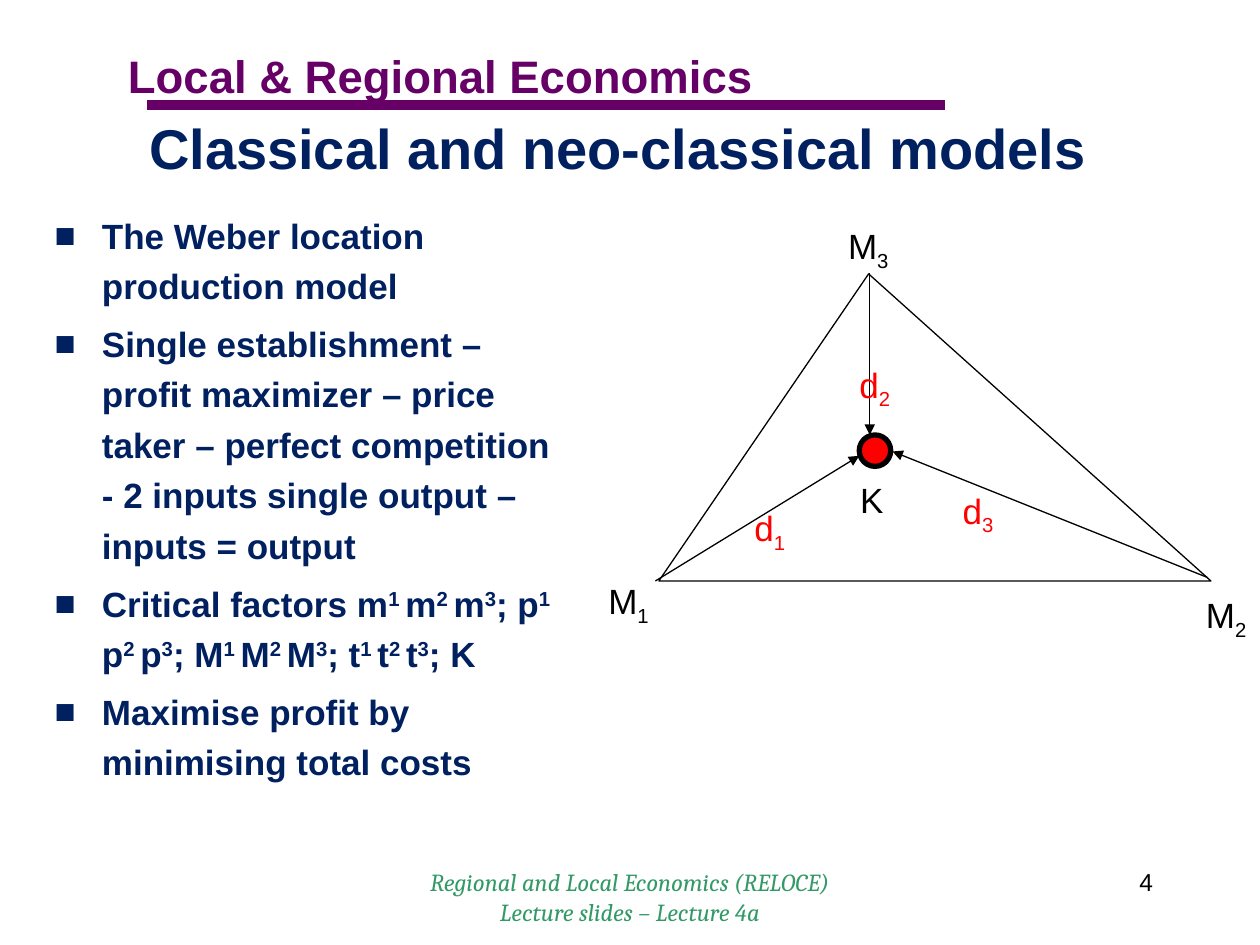
"""Build a slide on the Weber location model with its location triangle."""
from lxml.etree import SubElement
from pptx import Presentation
from pptx.dml.color import RGBColor
from pptx.enum.shapes import MSO_CONNECTOR, MSO_SHAPE
from pptx.enum.text import MSO_ANCHOR, MSO_AUTO_SIZE, PP_ALIGN
from pptx.oxml.ns import qn
from pptx.util import Pt

COLORS = {"purple": "660066", "navy": "002060", "green": "339966",
          "red": "FF0000", "black": "000000"}
BULLETS = [
    "The Weber location production model",
    "Single establishment – profit maximizer – price taker – perfect competition"
    " - 2 inputs single output – inputs = output",
    "Critical factors m|1 |m|2 |m|3|; p|1 |p|2 |p|3|; M|1 |M|2 |M|3|; t|1 |t|2 |t|3|; K",
    "Maximise profit by minimising total costs",
]
ARROWS = [(690, 330, 510, 258), (497, 156, 497, 248.5), (374.5, 332, 491, 260.5)]
LABELS = [
    ("K", 484.5, 270, 28, "black"),
    ("M|3", 477.5, 125, 38, "black"),
    ("M|1", 340.5, 327.5, 38, "black"),
    ("M|2", 682, 335.5, 38, "black"),
    ("d|1", 424, 286, 33, "red"),
    ("d|2", 484, 204, 33, "red"),
    ("d|3", 543, 276, 33, "red"),
]


def rgb(name):
    return RGBColor.from_string(COLORS[name])


def format_runs(p, size, color, font="Arial", bold=False, italic=False):
    for r in p.runs:
        r.font.name, r.font.size = font, Pt(size)
        r.font.bold, r.font.italic = bold, italic
        r.font.color.rgb = rgb(color)


def add_scripted(p, text, baseline):
    for i, part in enumerate(text.split("|")):
        r = p.add_run()
        r.text = part
        if i % 2:
            r._r.get_or_add_rPr().set("baseline", str(baseline * 1000))


def place(sp, left, top, width, height):
    sp.left, sp.top, sp.width, sp.height = Pt(left), Pt(top), Pt(width), Pt(height)


def add_text(s, text, box, size, color, align=PP_ALIGN.LEFT, **style):
    tf = s.shapes.add_textbox(*map(Pt, box)).text_frame
    tf.word_wrap = True
    tf.text = text
    for p in tf.paragraphs:
        p.alignment = align
        format_runs(p, size, color, **style)


def add_label(s, text, left, top, width, color):
    tf = s.shapes.add_textbox(Pt(left), Pt(top), Pt(width), Pt(31)).text_frame
    tf.word_wrap = False
    tf.auto_size = MSO_AUTO_SIZE.SHAPE_TO_FIT_TEXT
    add_scripted(tf.paragraphs[0], text, -25)
    format_runs(tf.paragraphs[0], 20, color)


def add_line(s, ends, color, width, arrow=False):
    line = s.shapes.add_connector(MSO_CONNECTOR.STRAIGHT, *map(Pt, ends))
    line.line.color.rgb = rgb(color)
    line.line.width = Pt(width)
    if arrow:
        SubElement(line.line._get_or_add_ln(), qn("a:tailEnd"), type="triangle")
    SubElement(line._element.spPr, qn("a:effectLst"))


def add_outlined(s, kind, box, width, fill=None):
    sp = s.shapes.add_shape(kind, *map(Pt, box))
    sp.shadow.inherit = False
    if fill:
        sp.fill.solid()
        sp.fill.fore_color.rgb = rgb(fill)
    else:
        sp.fill.background()
    sp.line.color.rgb = rgb("black")
    sp.line.width = Pt(width)
    return sp


def fill_title(sp, text):
    place(sp, 78, 72, 612, 35)
    tf = sp.text_frame
    tf.text = text
    tf.auto_size = MSO_AUTO_SIZE.NONE
    tf.vertical_anchor = MSO_ANCHOR.TOP
    p = tf.paragraphs[0]
    p.alignment = PP_ALIGN.LEFT
    p.line_spacing = 0.7
    format_runs(p, 32, "navy", bold=True)


def fill_bullets(sp, items):
    place(sp, 24, 114, 306, 366)
    tf = sp.text_frame
    tf.auto_size = MSO_AUTO_SIZE.NONE
    for i, item in enumerate(items):
        p = tf.add_paragraph() if i else tf.paragraphs[0]
        pPr = p._p.get_or_add_pPr()
        pPr.set("marL", str(Pt(27)))
        pPr.set("indent", str(-Pt(27)))
        SubElement(pPr, qn("a:buChar"), char="■")
        p.line_spacing = 1.2
        p.space_before = Pt(4.3 if i else 0)
        add_scripted(p, item, 30)
        format_runs(p, 20, "navy", bold=True)


def main():
    prs = Presentation()
    prs.slide_width, prs.slide_height = Pt(720), Pt(540)
    s = prs.slides.add_slide(prs.slide_layouts[1])
    add_text(s, "Local & Regional Economics", (66, 24, 480, 39), 26, "purple", bold=True)
    add_line(s, (84, 60, 540, 60), "purple", 6)
    fill_title(s.shapes.title, "Classical and neo-classical models")
    fill_bullets(s.placeholders[1], BULLETS)
    triangle = add_outlined(s, MSO_SHAPE.ISOSCELES_TRIANGLE, (376.5, 156.5, 315.5, 175.5), 0.75)
    triangle.adjustments[0] = 0.38
    for ends in ARROWS:
        add_line(s, ends, "black", 0.75, arrow=True)
    for label in LABELS:
        add_label(s, *label)
    add_outlined(s, MSO_SHAPE.OVAL, (491, 248.5, 18, 18), 3, "red")
    add_text(s, "Regional and Local Economics (RELOCE)\nLecture slides – Lecture 4a",
             (210, 492, 300, 36), 14, "green", PP_ALIGN.CENTER, font="Cambria", italic=True)
    add_text(s, "4", (516, 492, 150, 36), 14, "black", PP_ALIGN.RIGHT)
    prs.save("out.pptx")


if __name__ == "__main__":
    main()
